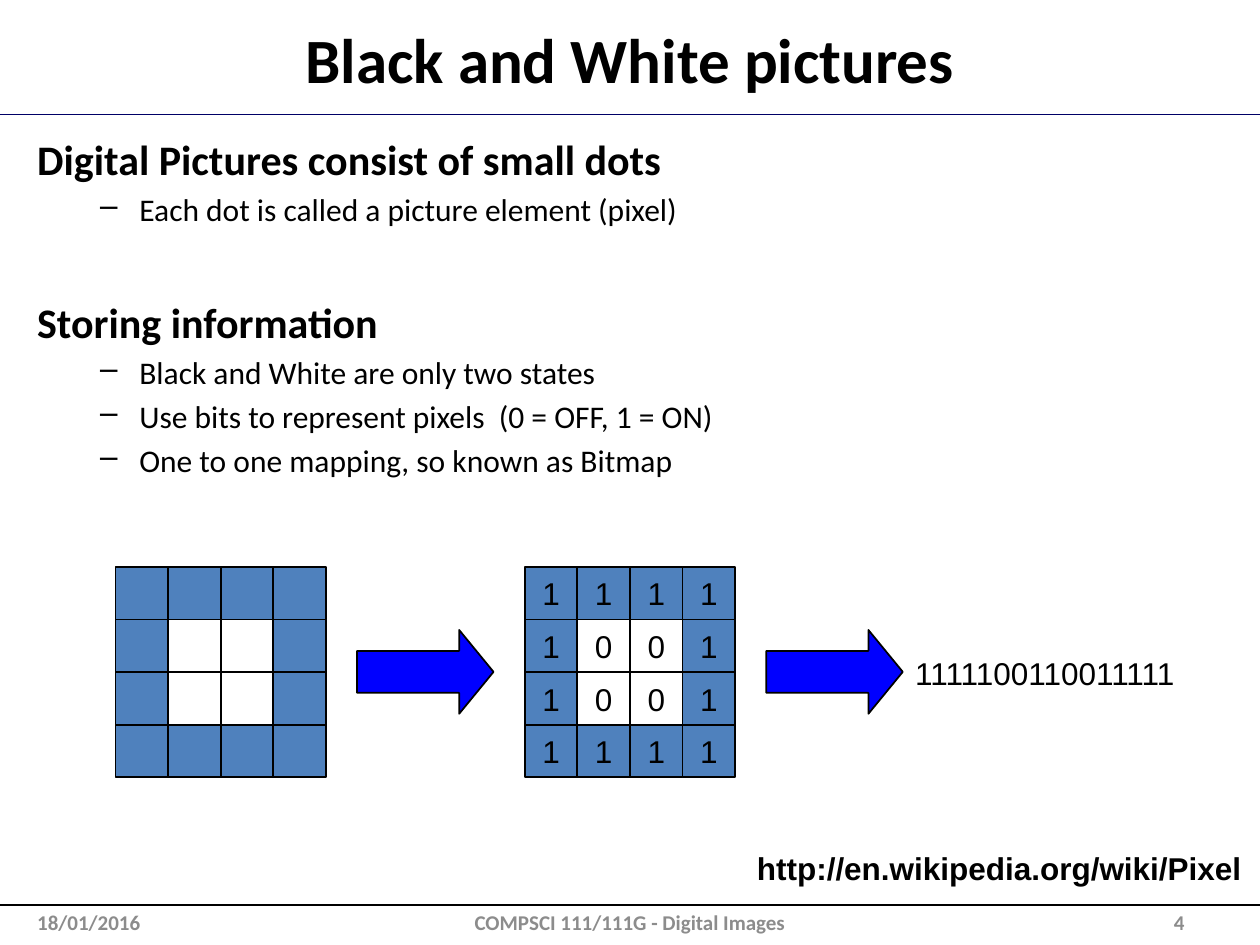
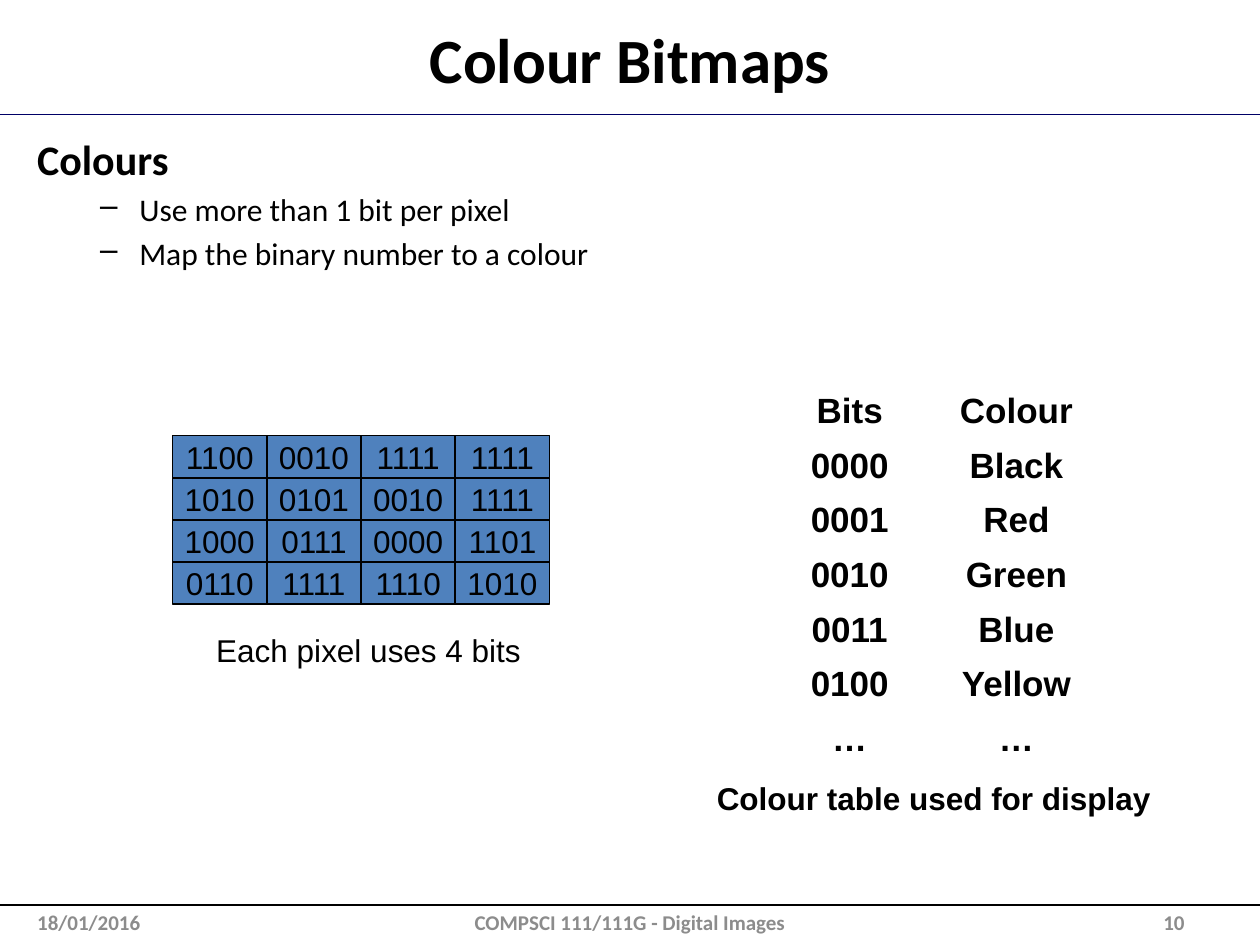
import pptx
import pptx.dml.color
import pptx.enum.shapes
import pptx.enum.text
import pptx.oxml.ns
import pptx.util
from lxml import etree

Cm = pptx.util.Cm
Pt = pptx.util.Pt
RGBColor = pptx.dml.color.RGBColor
SHAPE = pptx.enum.shapes.MSO_SHAPE
ALIGN = pptx.enum.text.PP_ALIGN
ANCHOR = pptx.enum.text.MSO_ANCHOR
AUTO = pptx.enum.text.MSO_AUTO_SIZE
qn = pptx.oxml.ns.qn

BLACK = RGBColor(0x00, 0x00, 0x00)
WHITE = RGBColor(0xFF, 0xFF, 0xFF)
NAVY = RGBColor(0x00, 0x00, 0x66)
GREY = RGBColor(0x8C, 0x8C, 0x8C)
PIXEL_BLUE = RGBColor(0x4F, 0x81, 0xBD)
ARROW_BLUE = RGBColor(0x00, 0x00, 0xFF)


def write(p, text, size=18, bold=False, color=BLACK, font="Arial", align=ALIGN.LEFT, before=0):
    p.alignment = align
    p.space_before = Pt(before)
    r = p.add_run()
    r.text = text
    r.font.size = Pt(size)
    r.font.bold = bold
    r.font.name = font
    r.font.color.rgb = color


def add_filled(s, kind, x, y, w, h, fill):
    sp = s.shapes.add_shape(kind, Cm(x), Cm(y), Cm(w), Cm(h))
    sp.shadow.inherit = False
    sp.fill.solid()
    sp.fill.fore_color.rgb = fill
    sp.line.color.rgb = BLACK
    sp.line.width = Pt(1)
    return sp


prs = pptx.Presentation()
prs.slide_width = Cm(25.4)
prs.slide_height = Cm(19.05)

contents = [
    ("Black and White pictures", "4", [
        ("Digital Pictures consist of small dots", [
            "Each dot is called a picture element (pixel)"]),
        ("Storing information", [
            "Black and White are only two states",
            "Use bits to represent pixels  (0 = OFF, 1 = ON)",
            "One to one mapping, so known as Bitmap"]),
    ]),
    ("Colour Bitmaps", "10", [
        ("Colours", [
            "Use more than 1 bit per pixel",
            "Map the binary number to a colour"]),
    ]),
]

for title, number, sections in contents:
    s = prs.slides.add_slide(prs.slide_layouts[5])

    for y, color in ((18.34, WHITE), (2.31, NAVY), (18.24, BLACK)):
        line = s.shapes.add_connector(
            pptx.enum.shapes.MSO_CONNECTOR.STRAIGHT, 0, Cm(y), prs.slide_width, Cm(y))
        line.line.color.rgb = color
        line.line.width = Pt(1)
        etree.SubElement(line._element.spPr, qn("a:effectLst"))

    sp = s.shapes.title
    sp.left, sp.top, sp.width, sp.height = Cm(0.25), Cm(0.3), Cm(24.9), Cm(1.75)
    tf = sp.text_frame
    tf.auto_size = AUTO.NONE
    tf.vertical_anchor = ANCHOR.MIDDLE
    write(tf.paragraphs[0], title, size=36, bold=True, font="Calibri", align=ALIGN.CENTER)

    tf = s.shapes.add_textbox(Cm(0.5), Cm(2.57), Cm(24.4), Cm(15.2)).text_frame
    tf.word_wrap = True
    for i, (heading, points) in enumerate(sections):
        p = tf.add_paragraph() if i else tf.paragraphs[0]
        write(p, heading, size=24, bold=True, font="Calibri", before=39 if i else 0)
        for point in points:
            p = tf.add_paragraph()
            pPr = p._p.get_or_add_pPr()
            pPr.set("marL", str(Cm(2.06)))
            pPr.set("indent", str(-Cm(0.79)))
            etree.SubElement(pPr, qn("a:buChar")).set("char", "–")
            write(p, point, font="Calibri", before=3.6)

    footers = [
        (0.5, 5.93, "18/01/2016", ALIGN.LEFT),
        (8.68, 8.04, "COMPSCI 111/111G - Digital Images", ALIGN.CENTER),
        (18.2, 5.93, number, ALIGN.RIGHT),
    ]
    for x, w, text, align in footers:
        tf = s.shapes.add_textbox(Cm(x), Cm(18.24), Cm(w), Cm(0.69)).text_frame
        tf.word_wrap = True
        tf.vertical_anchor = ANCHOR.MIDDLE
        write(tf.paragraphs[0], text, size=12, bold=True, color=GREY, font="Calibri", align=align)

mono, colour = prs.slides

bitmap = ["1111", "1001", "1001", "1111"]
codes = [
    "1100 0010 1111 1111".split(),
    "1010 0101 0010 1111".split(),
    "1000 0111 0000 1101".split(),
    "0110 1111 1110 1010".split(),
]
grids = [
    (mono, 2.33, 11.43, 1.06, 1.06, bitmap, False),
    (mono, 10.58, 11.43, 1.06, 1.06, bitmap, True),
    (colour, 3.48, 8.78, 1.9, 0.85, codes, True),
]
for s, x, y, w, h, rows, labelled in grids:
    for i, row in enumerate(rows):
        for j, bits in enumerate(row):
            fill = WHITE if bits == "0" else PIXEL_BLUE
            sp = add_filled(s, SHAPE.RECTANGLE, x + j * w, y + i * h, w, h, fill)
            if labelled:
                tf = sp.text_frame
                tf.word_wrap = False
                tf.vertical_anchor = ANCHOR.MIDDLE
                write(tf.paragraphs[0], bits, align=ALIGN.CENTER)

for x in (7.2, 15.45):
    sp = add_filled(mono, SHAPE.RIGHT_ARROW, x, 12.7, 2.75, 1.69, ARROW_BLUE)
    sp.adjustments[1] = 0.41

color_table = [
    ("Bits", "Colour"),
    ("0000", "Black"),
    ("0001", "Red"),
    ("0010", "Green"),
    ("0011", "Blue"),
    ("0100", "Yellow"),
    ("…", "…"),
]
table = colour.shapes.add_table(
    len(color_table), 2, Cm(15.45), Cm(7.77), Cm(6.72), Cm(7.7)).table
for i, row in enumerate(color_table):
    table.rows[i].height = Cm(1.1)
    for j, text in enumerate(row):
        cell = table.cell(i, j)
        cell.fill.background()
        write(cell.text_frame.paragraphs[0], text, size=20, bold=True, align=ALIGN.CENTER)

labels = [
    (mono, 18.2, 13.06, 5.8, "1111100110011111", False),
    (mono, 15.01, 17, 10.39, "http://en.wikipedia.org/wiki/Pixel", True),
    (colour, 4.11, 12.6, 6.65, "Each pixel uses 4 bits", False),
    (colour, 14.2, 15.57, 9.27, "Colour table used for display", True),
]
for s, x, y, w, text, bold in labels:
    tf = s.shapes.add_textbox(Cm(x), Cm(y), Cm(w), Cm(1.02)).text_frame
    tf.word_wrap = False
    tf.auto_size = AUTO.SHAPE_TO_FIT_TEXT
    write(tf.paragraphs[0], text, bold=bold)

prs.save("out.pptx")
